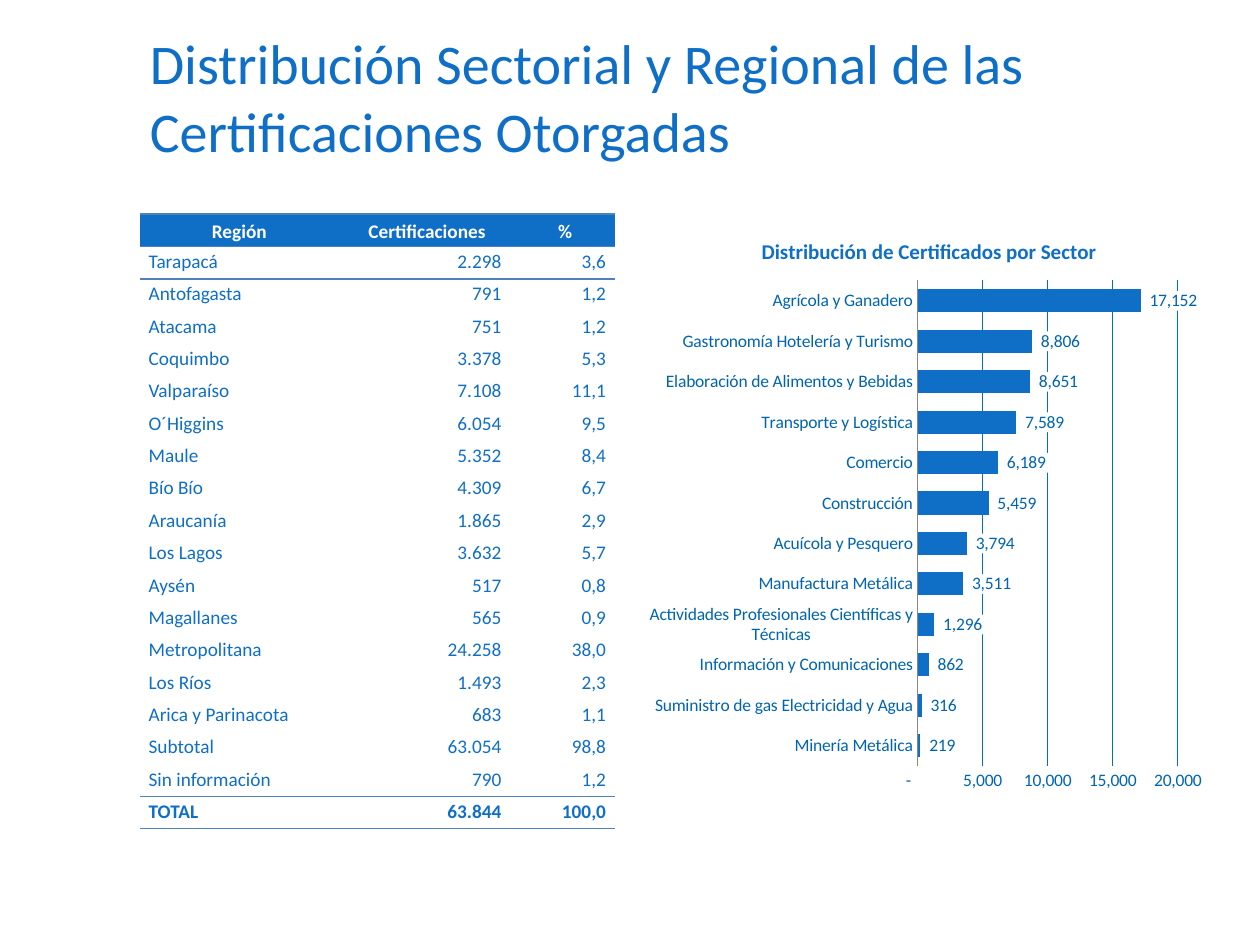
import pptx
import pptx.chart.data
import pptx.dml.color
import pptx.enum.chart
import pptx.enum.text
import pptx.oxml
import pptx.util
from pptx.util import Inches

BLUE = "0F6FC6"
INK = "0065B0"
RULE = "4F81BD"
WHITE = "FFFFFF"
FACE = "Calibri"
FORMAT = '_-* #,##0_-;\\-* #,##0_-;_-* "-"??_-;_-@_'
PLAIN = "{2D5ABB26-0587-4C30-8999-92F81FD0307C}"
NS = ('xmlns:a="http://schemas.openxmlformats.org/drawingml/2006/main" '
      'xmlns:c="http://schemas.openxmlformats.org/drawingml/2006/chart"')

HEADS = ("Región", "Certificaciones", "%")
ROWS = [
    ("Tarapacá", "2.298", "3,6"),
    ("Antofagasta", "791", "1,2"),
    ("Atacama", "751", "1,2"),
    ("Coquimbo", "3.378", "5,3"),
    ("Valparaíso", "7.108", "11,1"),
    ("O´Higgins", "6.054", "9,5"),
    ("Maule", "5.352", "8,4"),
    ("Bío Bío", "4.309", "6,7"),
    ("Araucanía", "1.865", "2,9"),
    ("Los Lagos", "3.632", "5,7"),
    ("Aysén", "517", "0,8"),
    ("Magallanes", "565", "0,9"),
    ("Metropolitana", "24.258", "38,0"),
    ("Los Ríos", "1.493", "2,3"),
    ("Arica y Parinacota", "683", "1,1"),
    ("Subtotal", "63.054", "98,8"),
    ("Sin información", "790", "1,2"),
    ("TOTAL", "63.844", "100,0"),
]
SECTORS = {
    "Minería Metálica": 219,
    "Suministro de gas Electricidad y Agua": 316,
    "Información y Comunicaciones": 862,
    "Actividades Profesionales Científicas y Técnicas": 1296,
    "Manufactura Metálica": 3511,
    "Acuícola y Pesquero": 3794,
    "Construcción": 5459,
    "Comercio": 6189,
    "Transporte y Logística": 7589,
    "Elaboración de Alimentos y Bebidas": 8651,
    "Gastronomía Hotelería y Turismo": 8806,
    "Agrícola y Ganadero": 17152,
}


def paint(color, value):
    color.rgb = pptx.dml.color.RGBColor.from_string(value)


def style(font, size, color, bold=False):
    font.name = FACE
    font.size = pptx.util.Pt(size)
    font.bold = bold
    paint(font.color, color)


def write(frame, text, size=11, color=BLUE, bold=False, align="LEFT", space=1.0):
    para = frame.paragraphs[0]
    para.alignment = getattr(pptx.enum.text.PP_ALIGN, align)
    para.line_spacing = space
    run = para.add_run()
    run.text = text
    style(run.font, size, color, bold)


def add_title(slide):
    box = slide.shapes.add_textbox(Inches(1.09), Inches(0.18), Inches(8.48), Inches(0.81))
    box.text_frame.word_wrap = True
    write(box.text_frame, "Distribución Sectorial y Regional de las "
          "Certificaciones Otorgadas", size=32)


def edge(cell, side):
    props = cell._tc.get_or_add_tcPr()
    props.append(pptx.oxml.parse_xml(
        f'<a:ln{side} {NS} w="12700"><a:solidFill><a:srgbClr val="{RULE}"/>'
        f'</a:solidFill></a:ln{side}>'))


def fill_cell(cell, text, head, bold, col, sides):
    cell.margin_left = Inches(0.07)
    cell.margin_right = Inches(0.11 if col == 1 and not head else 0.07)
    cell.margin_top = cell.margin_bottom = 0
    for side in sides:
        edge(cell, side)
    if head:
        cell.vertical_anchor = pptx.enum.text.MSO_ANCHOR.MIDDLE
        cell.fill.solid()
        paint(cell.fill.fore_color, BLUE)
    else:
        cell.fill.background()
    align = "CENTER" if head else "RIGHT" if col else "LEFT"
    write(cell.text_frame, text, color=WHITE if head else BLUE,
          bold=bold, align=align, space=1.15)


def add_grid(slide):
    lines = [HEADS] + ROWS
    last = len(lines) - 1
    frame = slide.shapes.add_table(len(lines), len(HEADS), Inches(1.11), Inches(1.7),
                                   Inches(3.77), Inches(4.88))
    table = frame.table
    table.horz_banding = False
    table._tbl.tblPr[0].text = PLAIN
    for col, width in zip(table.columns, (1.58, 1.4, 0.79)):
        col.width = Inches(width)
    borders = {0: "TB", 1: "T", last - 1: "B", last: "TB"}
    for row, line in enumerate(lines):
        for col, text in enumerate(line):
            fill_cell(table.cell(row, col), text, row == 0, row in (0, last),
                      col, borders.get(row, ""))


def set_plot(chart, left, top, width, height):
    area = chart._chartSpace.chart.plotArea
    for old in area.findall(pptx.oxml.ns.qn("c:layout")):
        area.remove(old)
    area.insert(0, pptx.oxml.parse_xml(
        f'<c:layout {NS}><c:manualLayout><c:layoutTarget val="inner"/>'
        f'<c:xMode val="edge"/><c:yMode val="edge"/><c:x val="{left}"/>'
        f'<c:y val="{top}"/><c:w val="{width}"/><c:h val="{height}"/>'
        f'</c:manualLayout></c:layout>'))


def set_axes(chart):
    none = pptx.enum.chart.XL_TICK_MARK.NONE
    for axis in (chart.category_axis, chart.value_axis):
        axis.major_tick_mark = axis.minor_tick_mark = none
        style(axis.tick_labels.font, 10, INK)
    chart.category_axis.has_major_gridlines = False
    paint(chart.category_axis.format.line.color, "868686")
    scale = chart.value_axis
    scale.minimum_scale, scale.maximum_scale, scale.major_unit = 0, 20000, 5000
    scale.format.line.fill.background()
    scale.tick_labels.number_format = FORMAT
    scale.tick_labels.number_format_is_linked = False
    grid = scale.major_gridlines.format.line
    grid.width = pptx.util.Pt(0.75)
    paint(grid.color, "0070C0")


def set_bars(plot):
    plot.gap_width, plot.overlap = 75, -25
    plot.vary_by_categories = False
    bars = plot.series[0].format.fill
    bars.solid()
    paint(bars.fore_color, BLUE)
    plot.has_data_labels = True
    labels = plot.data_labels
    labels.show_value = True
    labels.number_format = FORMAT
    labels.number_format_is_linked = False
    labels.position = pptx.enum.chart.XL_LABEL_POSITION.OUTSIDE_END
    style(labels.font, 10, INK)
    labels._element.find(pptx.oxml.ns.qn("c:txPr")).addprevious(pptx.oxml.parse_xml(
        f'<c:spPr {NS}><a:solidFill><a:srgbClr val="{WHITE}"/></a:solidFill></c:spPr>'))


def add_bars(slide):
    data = pptx.chart.data.CategoryChartData()
    data.categories = list(SECTORS)
    data.add_series("Series 1", list(SECTORS.values()))
    chart = slide.shapes.add_chart(
        pptx.enum.chart.XL_CHART_TYPE.BAR_CLUSTERED, Inches(5.08), Inches(1.71),
        Inches(4.59), Inches(4.7), data).chart
    chart.has_legend = False
    style(chart.font, 10, INK)
    chart.has_title = True
    chart.chart_title.include_in_layout = False
    write(chart.chart_title.text_frame, "Distribución de Certificados por Sector",
          size=12, bold=True, align="CENTER")
    set_axes(chart)
    set_bars(chart.plots[0])
    set_plot(chart, 0.48, 0.11, 0.45, 0.82)


def main():
    deck = pptx.Presentation()
    deck.slide_width, deck.slide_height = Inches(10), Inches(7.5)
    slide = deck.slides.add_slide(deck.slide_layouts[6])
    add_title(slide)
    add_bars(slide)
    add_grid(slide)
    deck.save("out.pptx")


if __name__ == "__main__":
    main()
